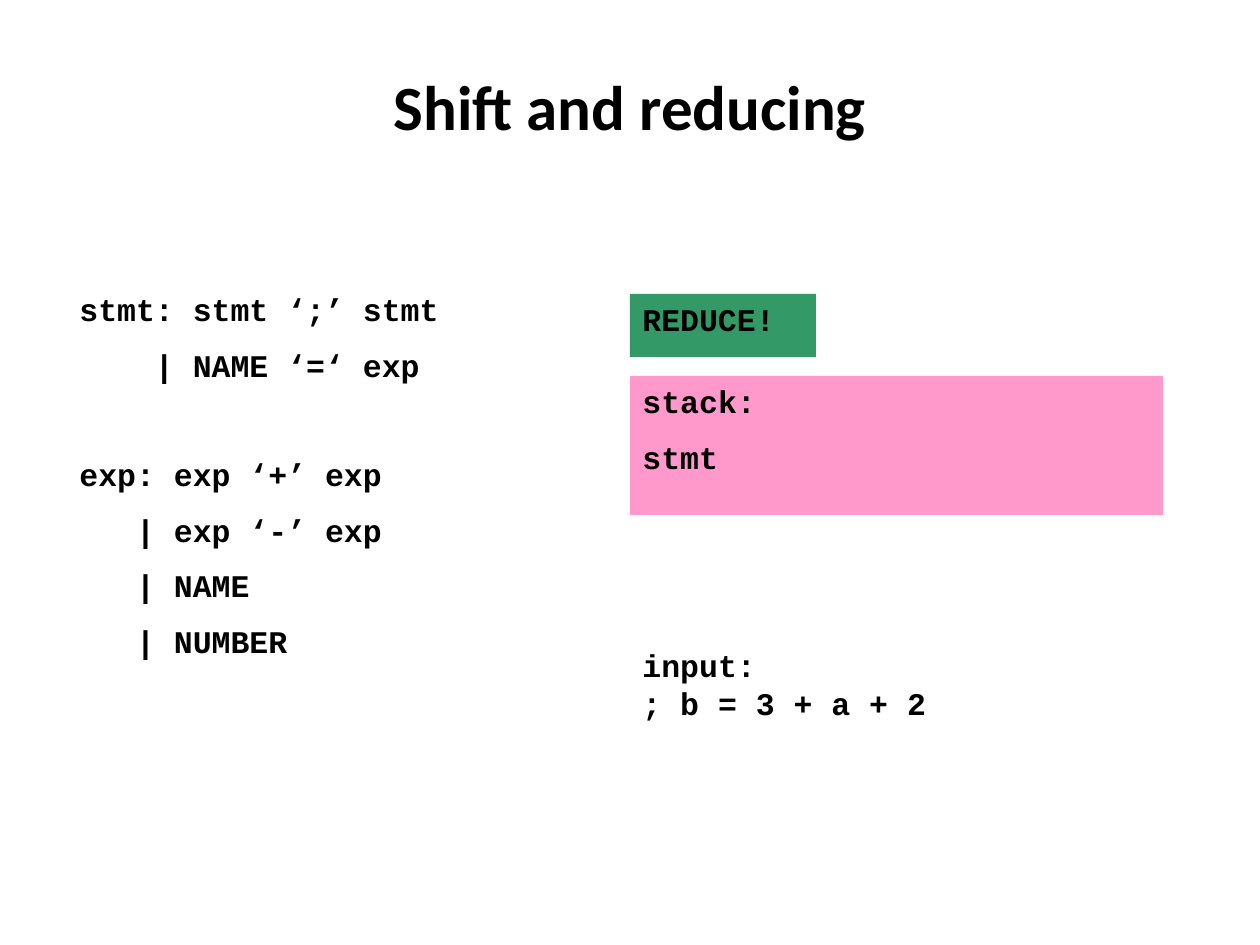
from dataclasses import dataclass

from pptx import Presentation
from pptx.dml.color import RGBColor
from pptx.enum.shapes import MSO_SHAPE
from pptx.enum.text import MSO_ANCHOR, PP_ALIGN
from pptx.util import Emu, Pt

PX_PER_INCH = 126
CHAR_EM = 0.6  # advance of one monospaced character


def px(length):
    return Emu(round(length * 914400 / PX_PER_INCH))


@dataclass(frozen=True)
class Theme:
    ink: RGBColor = RGBColor(0x00, 0x00, 0x00)
    action: RGBColor = RGBColor(0x33, 0x99, 0x66)
    stack: RGBColor = RGBColor(0xFF, 0x99, 0xCC)
    title_font: str = "Calibri"
    code_font: str = "Courier New"
    title_size: int = 36
    code_size: int = 18
    line_gap: float = 10.2
    rule_gap: float = 40.8


THEME = Theme()


def write_lines(shape, lines, font=THEME.code_font, size=THEME.code_size,
                gap=0, anchor=MSO_ANCHOR.TOP, align=PP_ALIGN.LEFT):
    frame = shape.text_frame
    frame.word_wrap = True
    frame.vertical_anchor = anchor
    frame.text = "\n".join(lines)
    for index, paragraph in enumerate(frame.paragraphs):
        paragraph.alignment = align
        paragraph.space_before = Pt(gap if index else 0)
        for run in paragraph.runs:
            run.font.name = font
            run.font.size = Pt(size)
            run.font.bold = True
            run.font.color.rgb = THEME.ink
    return frame.paragraphs


def add_text(slide, box, lines, **style):
    return write_lines(slide.shapes.add_textbox(*map(px, box)), lines, **style)


def add_panel(slide, box, fill, lines, **style):
    panel = slide.shapes.add_shape(MSO_SHAPE.RECTANGLE, *map(px, box))
    panel.shadow.inherit = False
    panel.fill.solid()
    panel.fill.fore_color.rgb = fill
    panel.line.fill.background()
    write_lines(panel, lines, **style)


def add_title(slide, box, title):
    add_text(slide, box, [title], font=THEME.title_font, size=THEME.title_size,
             anchor=MSO_ANCHOR.MIDDLE, align=PP_ALIGN.CENTER)


def add_grammar(slide, box, rules):
    """Each rule is (name, alternatives); later alternatives align their bar with the colon."""
    lines, indents, gaps = [], [], []
    for name, (first, *others) in rules:
        lines += [f"{name}: {first}"] + [f"| {other}" for other in others]
        indents += [0] + [len(name)] * len(others)
        gaps += [THEME.rule_gap if gaps else 0] + [THEME.line_gap] * len(others)
    for paragraph, indent, gap in zip(add_text(slide, box, lines), indents, gaps):
        paragraph.space_before = Pt(gap)
        properties = paragraph._p.get_or_add_pPr()
        properties.set("marL", str(int(Pt(indent * CHAR_EM * THEME.code_size))))
        properties.set("indent", "0")


def add_parser_state(slide, box, action, stack, remaining):
    left, top, width, height = box
    input_height = 113
    add_text(slide, (left, top + height - input_height, 372, input_height),
             ["input:", remaining])
    add_panel(slide, (left, top + 82, width, 139), THEME.stack,
              ["stack:", stack], gap=THEME.line_gap)
    add_panel(slide, (left, top, 186, 63), THEME.action, [action])


def main():
    presentation = Presentation()
    presentation.slide_width, presentation.slide_height = px(1260), px(945)
    slide = presentation.slides.add_slide(presentation.slide_layouts[6])
    add_title(slide, (63, 38, 1134, 135), "Shift and reducing")
    add_grammar(slide, (67, 284, 507, 515), [
        ("stmt", ["stmt ‘;’ stmt", "NAME ‘=‘ exp"]),
        ("exp", ["exp ‘+’ exp", "exp ‘-’ exp", "NAME", "NUMBER"]),
    ])
    add_parser_state(slide, (630, 294, 533, 459), "REDUCE!", "stmt", "; b = 3 + a + 2")
    presentation.save("out.pptx")


if __name__ == "__main__":
    main()
